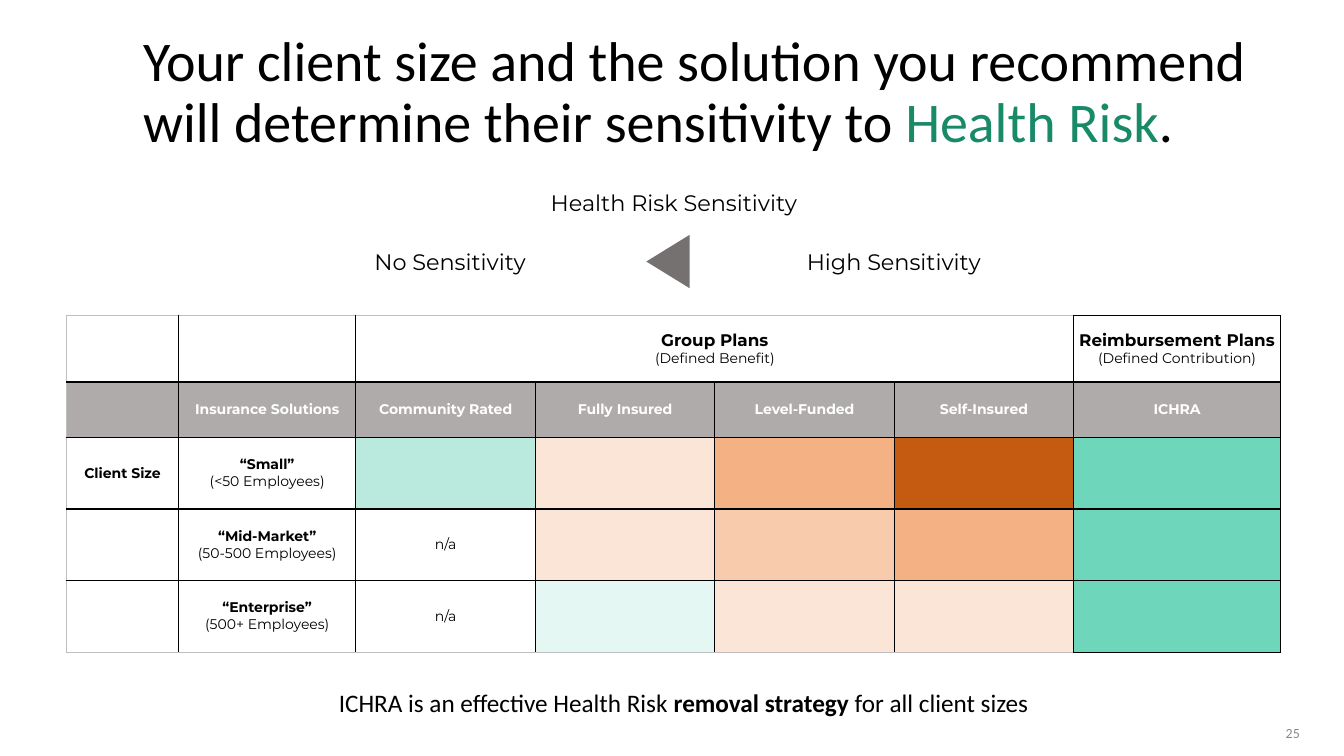
import pptx
import pptx.util
import pptx.dml.color
import pptx.enum.shapes
import pptx.enum.text
import pptx.oxml
import pptx.oxml.ns

PX = 9144  # EMU per px, at 100 px to the inch
C = {
    "black": "000000", "white": "FFFFFF", "green": "188A68", "number": "888888",
    "arrow": "767171", "header": "AFABAB", "edge": "BFBFBF",
    "mint": "BAEADE", "pale_mint": "E4F7F2", "teal": "6DD6BB",
    "peach": "FBE5D6", "apricot": "F8CBAD", "orange": "F4B183", "rust": "C55A11",
}
ALIGN = pptx.enum.text.PP_ALIGN
ANCHOR = pptx.enum.text.MSO_ANCHOR


def px(n):
    return pptx.util.Emu(n * PX)


def rgb(name):
    return pptx.dml.color.RGBColor.from_string(C[name])


class Deck:
    """Style and current slide."""
    body, heading = "Montserrat", "Calibri"

    def __init__(self, width, height):
        self.prs = pptx.Presentation()
        self.prs.slide_width, self.prs.slide_height = px(width), px(height)
        self.s = self.prs.slides.add_slide(self.prs.slide_layouts[6])

    def add_runs(self, p, runs, font, size, color="black", align=ALIGN.CENTER):
        """Fill a paragraph; each run is (text, overrides)."""
        p.alignment = align
        for text, over in runs:
            r = p.add_run()
            r.text = text.rstrip("\n")
            fmt = {"name": font, "size": size, "bold": False, "color": color, **over}
            r.font.color.rgb = rgb(fmt.pop("color"))
            fmt["size"] = pptx.util.Pt(fmt["size"])
            for key, value in fmt.items():
                setattr(r.font, key, value)
            if text.endswith("\n"):
                p.add_line_break()

    def margins(self, obj, left, top, right, bottom):
        sides = {"margin_left": left, "margin_top": top,
                 "margin_right": right, "margin_bottom": bottom}
        for side, n in sides.items():
            setattr(obj, side, px(n))

    def text(self, box, runs, font, size, inset=(10, 5, 10, 5), spacing=1.0,
             anchor=ANCHOR.MIDDLE, **style):
        tf = self.s.shapes.add_textbox(*map(px, box)).text_frame
        tf.word_wrap = True
        tf.vertical_anchor = anchor
        self.margins(tf, *inset)
        p = tf.paragraphs[0]
        p.line_spacing = spacing
        self.add_runs(p, runs, font, size, **style)

    def arrow(self, box, color):
        kind = pptx.enum.shapes.MSO_SHAPE.FLOWCHART_MERGE
        sp = self.s.shapes.add_shape(kind, *map(px, box))
        sp.rotation = 90
        sp.shadow.inherit = False
        sp.fill.solid()
        sp.fill.fore_color.rgb = rgb(color)
        sp.line.fill.background()

    def border(self, cell, side, color, width=1):
        ns = pptx.oxml.ns.nsdecls("a")
        cell._tc.get_or_add_tcPr().append(pptx.oxml.parse_xml(
            f'<a:ln{side} {ns} w="{int(width * 12700)}"><a:solidFill>'
            f'<a:srgbClr val="{C[color]}"/></a:solidFill></a:ln{side}>'))

    def table(self, left, top, cols, rows, cells, merges):
        frame = self.s.shapes.add_table(len(rows), len(cols), px(left), px(top),
                                        px(sum(cols)), px(sum(rows)))
        t = frame.table
        t.first_row = t.horz_banding = False
        for col, n in zip(t.columns, cols):
            col.width = px(n)
        for row, n in zip(t.rows, rows):
            row.height = px(n)
        for first, last in merges:
            t.cell(*first).merge(t.cell(*last))
        end_row, end_col = len(rows) - 1, len(cols) - 1
        for i, line in enumerate(cells):
            for j, (runs, fill) in enumerate(line):
                cell = t.cell(i, j)
                # Outer edges are light, except round the last column
                light = {"L": j == 0, "R": False, "T": i == 0 and j < end_col,
                         "B": i == end_row and j < end_col}
                for side, is_light in light.items():
                    self.border(cell, side, "edge" if is_light else "black")
                cell.fill.solid()
                cell.fill.fore_color.rgb = rgb(fill)
                cell.vertical_anchor = ANCHOR.MIDDLE
                self.margins(cell, 5, 3, 5, 3)
                self.add_runs(cell.text_frame.paragraphs[0], runs, self.body, 10)


def blank(fill="white"):
    return [], fill


def label(text, size=10, note="", fill="white", color="black"):
    runs = [(text, {"bold": True, "size": size, "color": color})]
    return runs + ([(note, {})] if note else []), fill


def main():
    d = Deck(1333, 750)

    # Title and slide number
    d.text((132, 33, 1202, 120),
           [("Your client size and the solution you recommend will determine "
             "their sensitivity to ", {}),
            ("Health Risk", {"color": "green"}), (".", {})],
           d.heading, 40, spacing=0.9, align=ALIGN.LEFT)
    d.text((1264, 714, 35, 26), [("25", {})], d.heading, 10, inset=(0, 5, 10, 5),
           color="number", align=ALIGN.RIGHT)

    # Sensitivity scale
    for left, top, caption in ((460, 184, "Health Risk Sensitivity"),
                               (678, 243, "High Sensitivity"),
                               (238, 243, "No Sensitivity")):
        d.text((left, top, 417, 33), [(caption, {})], d.body, 16, inset=(3, 3, 3, 3))
    d.arrow((636, 238, 53, 43), "arrow")

    # Plan table
    solutions = ["Insurance Solutions", "Community Rated", "Fully Insured",
                 "Level-Funded", "Self-Insured", "ICHRA"]
    na = [("n/a", {})], "white"
    sizes = [
        (label("Client Size"), "“Small”\n", "(<50 Employees)", blank("mint"),
         ["peach", "orange", "rust"]),
        (blank(), "“Mid-Market”\n", "(50-500 Employees)", na,
         ["peach", "apricot", "orange"]),
        (blank(), "“Enterprise”\n", "(500+ Employees)", na,
         ["pale_mint", "peach", "peach"]),
    ]
    cells = [
        [blank(), blank(), label("Group Plans\n", 12, "(Defined Benefit)"),
         blank(), blank(), blank(),
         label("Reimbursement Plans ", 12, "(Defined Contribution)")],
        [blank("header")] + [label(name, fill="header", color="white")
                             for name in solutions],
    ]
    for lead, name, staff, community, risks in sizes:
        cells.append([lead, label(name, note=staff), community]
                     + [blank(fill) for fill in risks + ["teal"]])
    d.table(66, 313, [111, 176] + [178] * 4 + [205], [66, 55] + [71] * 3,
            cells, [((0, 2), (0, 5))])

    # Takeaway
    d.text((281, 677, 794, 40),
           [("ICHRA is an effective Health Risk ", {}),
            ("removal strategy", {"bold": True}),
            (" for all client sizes", {})],
           d.heading, 18, anchor=ANCHOR.TOP)

    d.prs.save("out.pptx")


if __name__ == "__main__":
    main()
